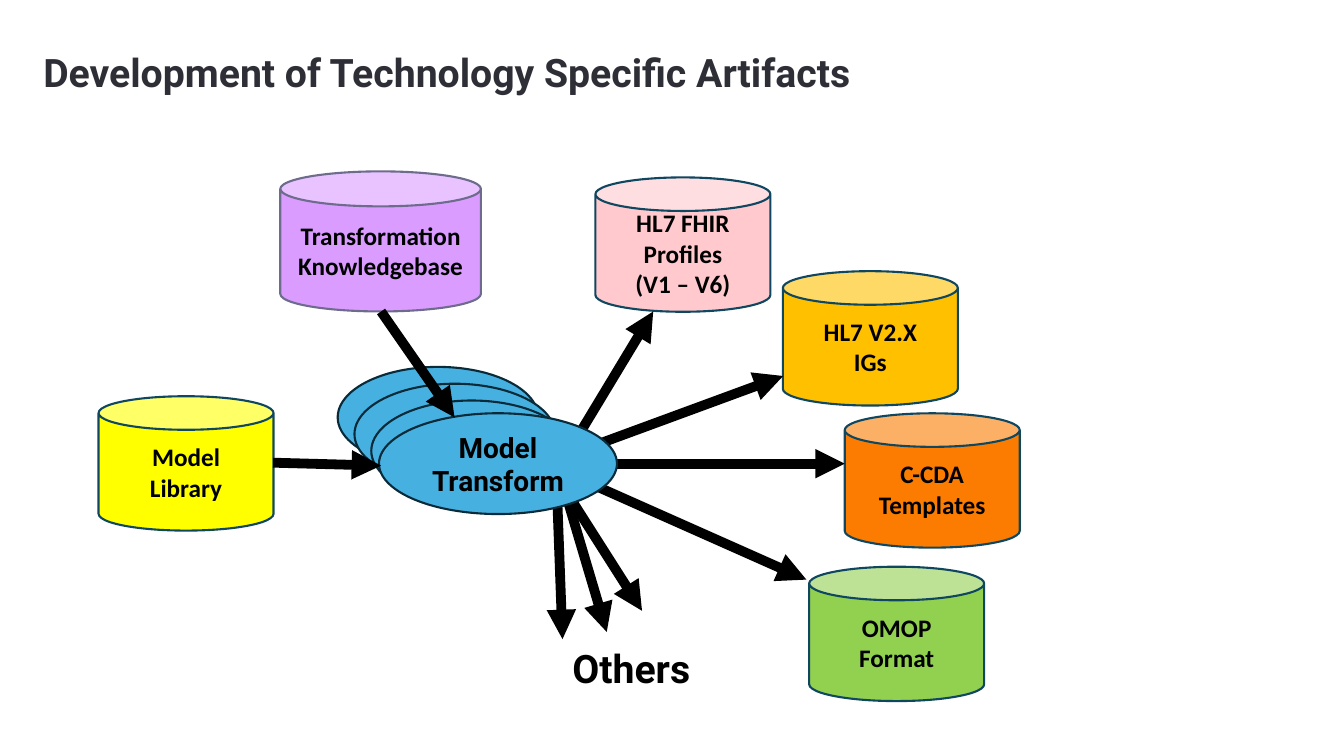
from lxml.etree import SubElement
from pptx import Presentation
from pptx.dml.color import RGBColor
from pptx.enum.shapes import MSO_CONNECTOR, MSO_SHAPE
from pptx.enum.text import MSO_ANCHOR, PP_ALIGN
from pptx.oxml.ns import qn
from pptx.util import Pt

TITLE = "Development of Technology Specific Artifacts"
OTHERS = "Others"
INK, BLACK, CAN_LINE = "2E2E36", "000000", "104760"
ELLIPSE_FILL, ELLIPSE_LINE = "46B1E1", "092A39"
CAN_SIZE = (125, 96)
STORES = [
    (["Model", "Library"], (70.4, 283), "FFFF00"),
    (["HL7 FHIR", "Profiles", "(V1 – V6)"], (425.3, 126.7), "FFC9CE"),
    (["HL7 V2.X", "IGs"], (559.2, 193.7), "FFC000"),
    (["C-CDA", "Templates"], (603.4, 295.2), "FB7C00"),
    (["OMOP", "Format"], (578, 404.8), "92D050"),
]
KNOWLEDGE = ["Transformation", "Knowledgebase"]
KNOWLEDGE_BOX = (200.2, 122.4, 143.3, 100.1)
STACK_START, STACK_STEP, STACK_COUNT = (241.2, 262.1), 12, 3
STACK_SIZE = (143.3, 72)
TRANSFORM = ["Model", "Transform"]
TRANSFORM_BOX = (270.7, 295.2, 170, 72)
OUTPUT_ARROWS = [
    (416.2, 306, 466.6, 222.5),
    (420.5, 319.7, 559.4, 268.6),
    (420.5, 331.2, 603.4, 331.2),
    (420.5, 344.9, 576, 414),
    (408.2, 357.1, 458.6, 436.3),
    (405.4, 357.1, 433.4, 451.4),
    (398.2, 360, 401.8, 456.5),
]
LIBRARY_ARROW = (195.1, 330.5, 272.2, 332.6)
KNOWLEDGE_ARROW = (272.2, 222.5, 324.7, 298.1)


def rgb(value):
    """Turn a hex string into a colour."""
    return RGBColor.from_string(value)


def write(s, lines, size, name, color=BLACK, align=PP_ALIGN.CENTER, spacing=None):
    """Write bold lines as paragraphs of a shape."""
    tf = s.text_frame
    for i, line in enumerate(lines):
        p = tf.add_paragraph() if i else tf.paragraphs[0]
        p.alignment, p.line_spacing = align, spacing
        r = p.add_run()
        r.text = line
        for key, value in {"size": Pt(size), "name": name, "bold": True}.items():
            setattr(r.font, key, value)
        r.font.color.rgb = rgb(color)


def add_node(shapes, kind, box, fill, line):
    """Add a filled, outlined shape with centred text."""
    s = shapes.add_shape(kind, *map(Pt, box))
    s.shadow.inherit = False
    s.fill.solid()
    s.fill.fore_color.rgb = rgb(fill)
    s.line.color.rgb = rgb(line)
    s.line.width = Pt(1.5)
    s.text_frame.vertical_anchor = MSO_ANCHOR.MIDDLE
    return s


def add_arrow(shapes, ends):
    """Add a thick black arrow."""
    s = shapes.add_connector(MSO_CONNECTOR.STRAIGHT, *map(Pt, ends))
    s.line.color.rgb = rgb(BLACK)
    s.line.width = Pt(7)
    SubElement(s.line._get_or_add_ln(), qn("a:tailEnd"), type="triangle")
    SubElement(s._element.spPr, qn("a:effectLst"))


def add_label(shapes, box, text, margin, wrap, **style):
    """Add a bold heading in a text box."""
    s = shapes.add_textbox(*map(Pt, box))
    tf = s.text_frame
    tf.word_wrap = wrap
    for side, value in zip(("left", "right", "top", "bottom"), margin):
        setattr(tf, f"margin_{side}", Pt(value))
    write(s, [text], 28, "Roboto", align=PP_ALIGN.LEFT, **style)


def main():
    """Build the slide."""
    prs = Presentation()
    prs.slide_width, prs.slide_height = Pt(960), Pt(540)
    shapes = prs.slides.add_slide(prs.slide_layouts[6]).shapes

    add_label(shapes, (23.8, 31, 699, 54.7), TITLE, (7.2,) * 4, True,
              color=INK, spacing=0.9)
    for lines, place, fill in STORES:
        s = add_node(shapes, MSO_SHAPE.CAN, place + CAN_SIZE, fill, CAN_LINE)
        write(s, lines, 18, "Calibri")
    for ends in OUTPUT_ARROWS:
        add_arrow(shapes, ends)
    add_label(shapes, (401.8, 456.5, 105.8, 41), OTHERS, (7.2, 7.2, 3.6, 3.6), False)

    for i in range(STACK_COUNT):
        place = tuple(v + i * STACK_STEP for v in STACK_START)
        add_node(shapes, MSO_SHAPE.OVAL, place + STACK_SIZE, ELLIPSE_FILL, ELLIPSE_LINE)
    s = add_node(shapes, MSO_SHAPE.OVAL, TRANSFORM_BOX, ELLIPSE_FILL, ELLIPSE_LINE)
    write(s, TRANSFORM, 20, "Roboto")

    add_arrow(shapes, LIBRARY_ARROW)
    s = add_node(shapes, MSO_SHAPE.CAN, KNOWLEDGE_BOX, "BF51FF", "6E6C8D")
    color = s._element.spPr.find(qn("a:solidFill"))[0]
    SubElement(color, qn("a:alpha"), val="57000")
    write(s, KNOWLEDGE, 18, "Calibri")
    add_arrow(shapes, KNOWLEDGE_ARROW)

    prs.save("out.pptx")


if __name__ == "__main__":
    main()
